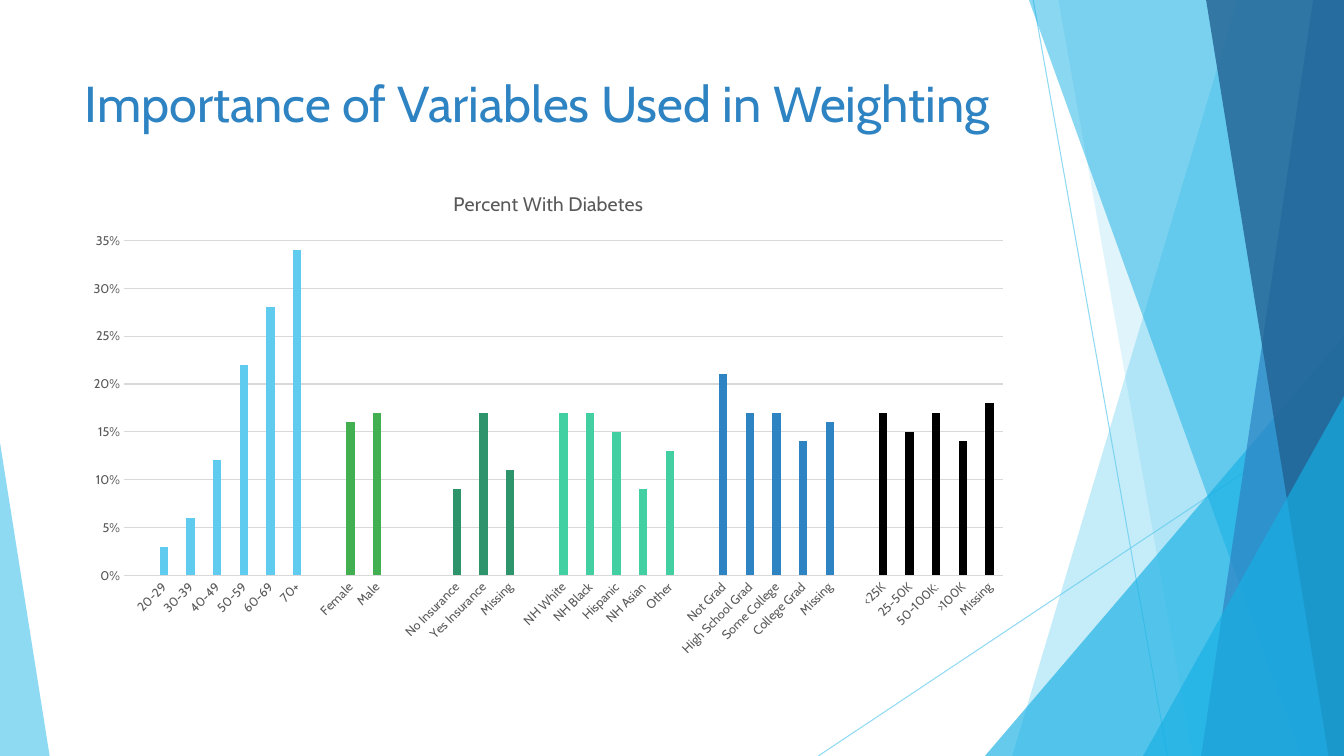
from lxml import etree
from pptx import Presentation
from pptx import util as u
from pptx.chart import data
from pptx.dml import color
from pptx.enum import chart as charts, shapes, text
from pptx.oxml import ns, parse_xml

COLORS = {"sky": "5FCBEF", "cyan": "17B0E4", "blue": "2E83C3", "navy": "226292",
          "green": "42B051", "forest": "2E946B", "mint": "42D0A2", "black": "000000",
          "gray": "595959", "grid": "D9D9D9"}
WIDTH, HEIGHT = 960, 540
TITLE = "Percent With Diabetes"
CHART_PLACE = (53.3, 122.4, 676.8, 352.8)
PLOT_PLACE = (88.6, 171.8, 627.8, 239.2)

GROUPS = [
    (1, "sky", {"20-29": .03, "30-39": .06, "40-49": .12, "50-59": .22,
                "60-69": .28, "70+": .34}),
    (1, "green", {"Female": .16, "Male": .17}),
    (2, "forest", {"No Insurance": .09, "Yes Insurance": .17, "Missing": .11}),
    (1, "mint", {"NH White": .17, "NH Black": .17, "Hispanic": .15,
                 "NH Asian": .09, "Other": .13}),
    (1, "blue", {"Not Grad": .21, "High School Grad": .17, "Some College": .17,
                 "College Grad": .14, "Missing": .16}),
    (1, "black", {"<25K": .17, "25-50K": .15, "50-100K:": .17, ">100K": .14,
                  "Missing": .18}),
]


def rgb(name):
    return color.RGBColor.from_string(COLORS[name])


def format_font(font, size, name, face="Cabin"):
    font.size, font.name, font.bold = u.Pt(size), face, False
    font.color.rgb = rgb(name)


def add_span(para, words, **style):
    span = para.add_run()
    span.text = words
    format_font(span.font, **style)


class Slide:
    """Holds the shared style and the current page."""

    def __init__(self, deck):
        self.page = deck.slides.add_slide(deck.slide_layouts[6])
        self.shapes = self.page.shapes

    def fade(self, element, percent):
        for tint in element.iter(ns.qn("a:srgbClr")):
            etree.SubElement(tint, ns.qn("a:alpha")).set("val", str(percent * 1000))

    def paint(self, shape, name, percent):
        shape.shadow.inherit = False
        shape.fill.solid()
        shape.fill.fore_color.rgb = rgb(name)
        shape.line.fill.background()
        self.fade(shape.fill._xPr, percent)

    def line(self, *ends):
        line = self.shapes.add_connector(shapes.MSO_CONNECTOR.STRAIGHT, *map(u.Pt, ends))
        line.line.width = u.Pt(.75)
        line.line.color.rgb = rgb("sky")
        properties = line._element.spPr
        self.fade(properties, 70)
        etree.SubElement(properties, ns.qn("a:effectLst"))

    def band(self, top, bottom, name, percent):
        builder = self.shapes.build_freeform(u.Pt(top), 0)
        corners = [(WIDTH, 0), (WIDTH, HEIGHT), (bottom, HEIGHT)]
        builder.add_line_segments([(u.Pt(x), u.Pt(y)) for x, y in corners])
        self.paint(builder.convert_to_shape(), name, percent)

    def triangle(self, left, top, width, peak, name, percent):
        shape = self.shapes.add_shape(shapes.MSO_SHAPE.ISOSCELES_TRIANGLE,
                                      *map(u.Pt, (left, top, width, HEIGHT - top)))
        shape.adjustments[0] = peak
        self.paint(shape, name, percent)

    def title(self, words, *place):
        box = self.shapes.add_textbox(*map(u.Pt, place))
        box.text_frame.word_wrap = True
        box.text_frame.vertical_anchor = text.MSO_ANCHOR.TOP
        add_span(box.text_frame.paragraphs[0], words, size=36, name="blue")

    def column_chart(self, groups, place, plot_place):
        bars = []
        for blanks, name, values in groups:
            bars += [("", None, None)] * blanks
            bars += [(label, value, name) for label, value in values.items()]
        table = data.CategoryChartData(number_format="0%")
        table.categories = [label for label, _, _ in bars]
        table.add_series(TITLE, [value for _, value, _ in bars])
        chart = self.shapes.add_chart(charts.XL_CHART_TYPE.COLUMN_CLUSTERED,
                                      *map(u.Pt, place), table).chart
        format_font(chart.font, 10, "black")
        chart.has_legend = False
        chart.has_title = True
        add_span(chart.chart_title.text_frame.paragraphs[0], TITLE, size=14, name="gray")
        chart.chart_title.include_in_layout = False
        plot = chart.plots[0]
        plot.gap_width, plot.overlap, plot.vary_by_categories = 219, -27, False
        series = plot.series[0]
        series.format.fill.solid()
        series.format.fill.fore_color.rgb = rgb("sky")
        for index, (_, _, name) in enumerate(bars):
            if name:
                fill = series.points[index].format.fill
                fill.solid()
                fill.fore_color.rgb = rgb(name)
        self.axes(chart)
        self.plot_area(chart, place, plot_place)

    def axes(self, chart):
        for axis in (chart.category_axis, chart.value_axis):
            axis.major_tick_mark = axis.minor_tick_mark = charts.XL_TICK_MARK.NONE
            format_font(axis.tick_labels.font, 9, "gray")
        labels, scale = chart.category_axis, chart.value_axis
        labels._element.txPr.find(ns.qn("a:bodyPr")).set("rot", "-2700000")
        scale.minimum_scale, scale.maximum_scale, scale.major_unit = 0, .35, .05
        scale.tick_labels.number_format = "0%"
        scale.tick_labels.number_format_is_linked = False
        scale.format.line.fill.background()
        for line in (labels.format.line, scale.major_gridlines.format.line):
            line.width = u.Pt(.75)
            line.color.rgb = rgb("grid")

    def plot_area(self, chart, place, plot_place):
        area = chart._chartSpace.chart.plotArea
        for old in area.findall(ns.qn("c:layout")):
            area.remove(old)
        left, top, width, height = place
        x, y, w, h = plot_place
        settings = {"layoutTarget": "inner", "xMode": "edge", "yMode": "edge",
                    "x": (x - left) / width, "y": (y - top) / height,
                    "w": w / width, "h": h / height}
        marks = "".join(f'<c:{key} val="{value}"/>' for key, value in settings.items())
        area.insert(0, parse_xml(f'<c:layout {ns.nsdecls("c")}><c:manualLayout>{marks}'
                                 '</c:manualLayout></c:layout>'))


def main():
    deck = Presentation()
    deck.slide_width, deck.slide_height = u.Pt(WIDTH), u.Pt(HEIGHT)
    slide = Slide(deck)
    slide.line(738, 0, 834, HEIGHT)
    slide.line(WIDTH, 290, 584.5, HEIGHT)
    slide.band(884, 723, "sky", 36)
    slide.band(756, 852, "sky", 20)
    slide.triangle(703.5, 240, 256.5, 1, "cyan", 66)
    slide.band(735, 929.5, "cyan", 50)
    slide.band(938, 858, "blue", 70)
    slide.band(861.5, 949, "navy", 80)
    slide.triangle(816.5, 283, 143.5, 1, "cyan", 66)
    slide.triangle(0, 316, 35.5, 0, "sky", 70)
    slide.title("Importance of Variables Used in Weighting", 53.5, 48, 677, 104)
    slide.column_chart(GROUPS, CHART_PLACE, PLOT_PLACE)
    deck.save("out.pptx")


if __name__ == "__main__":
    main()
